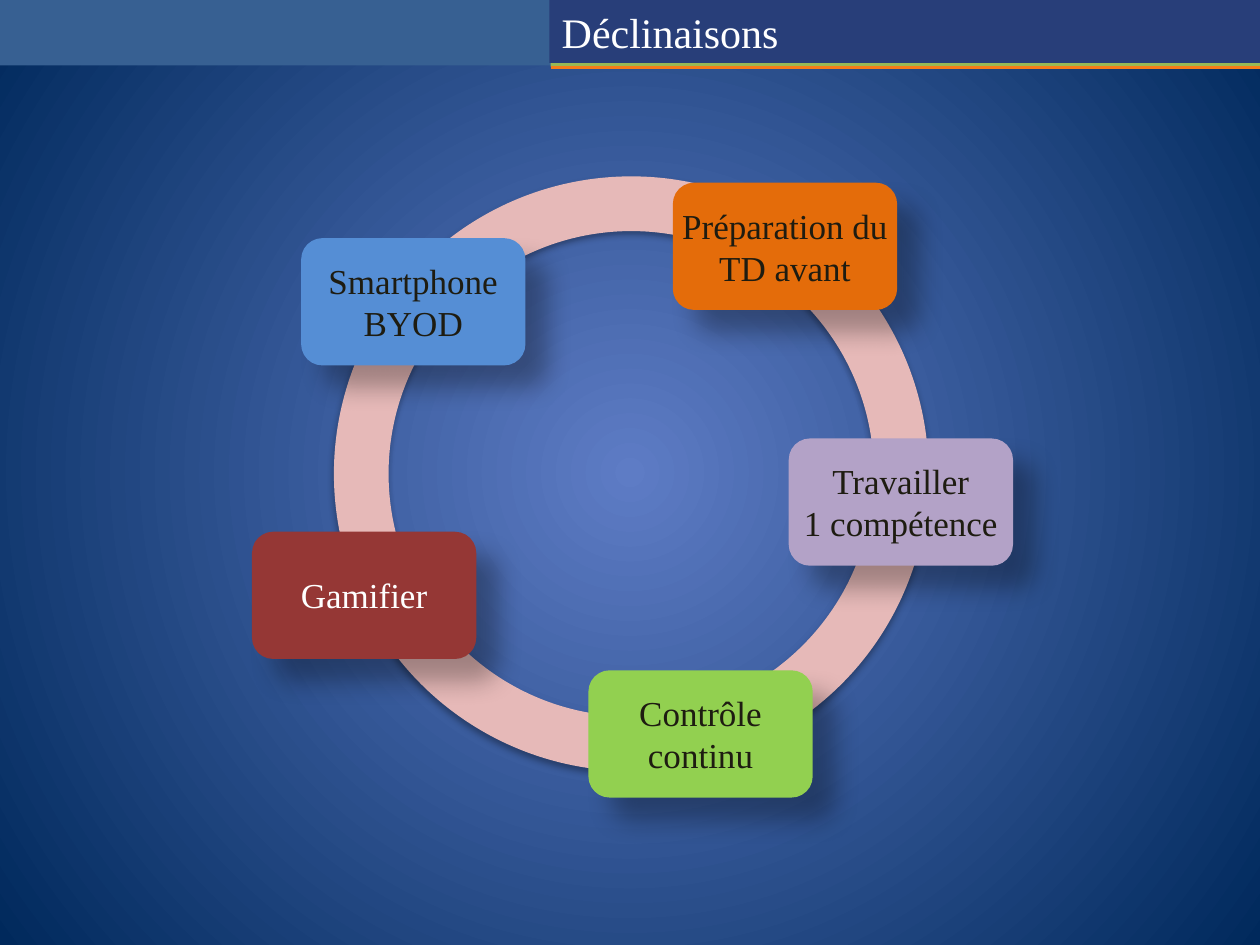
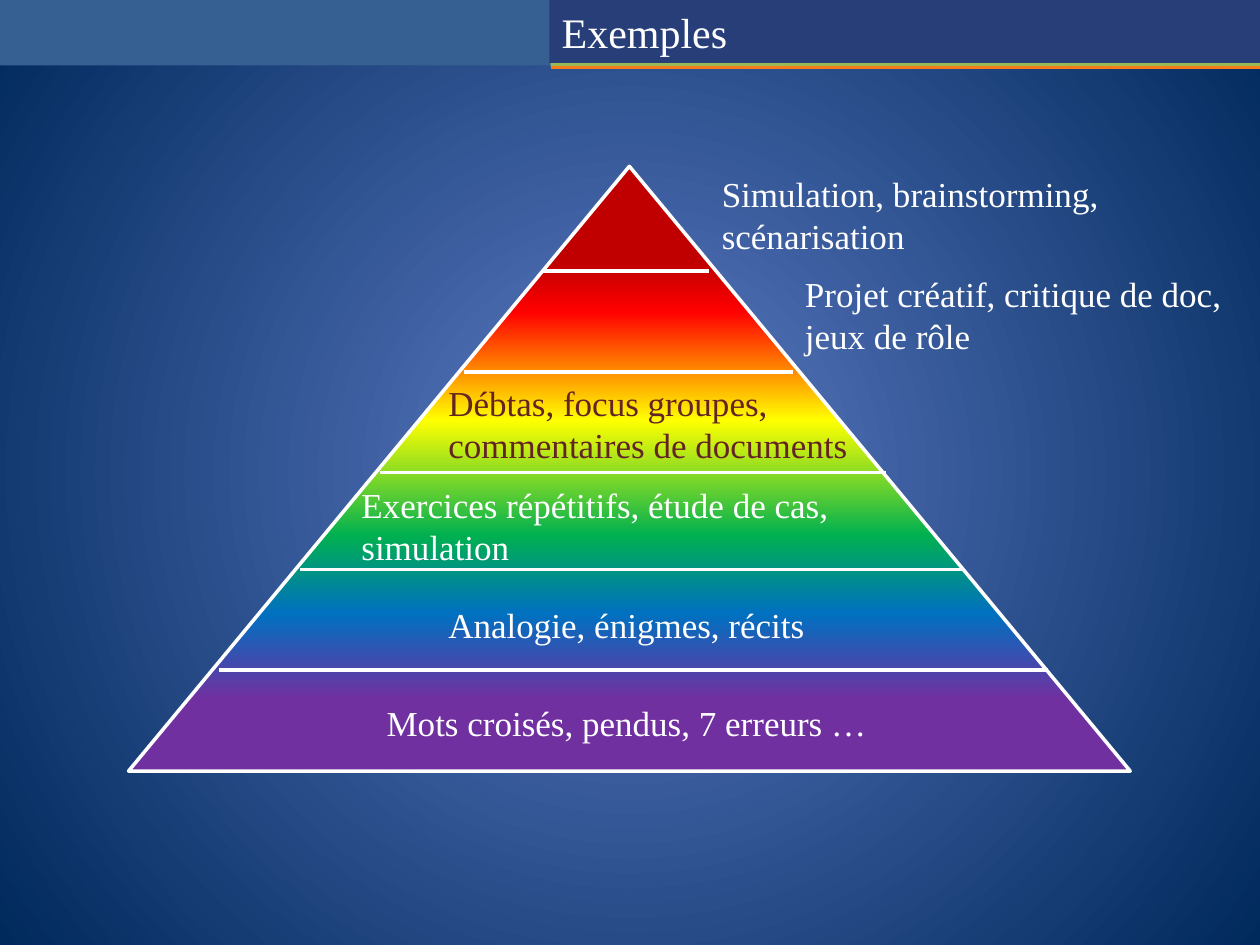
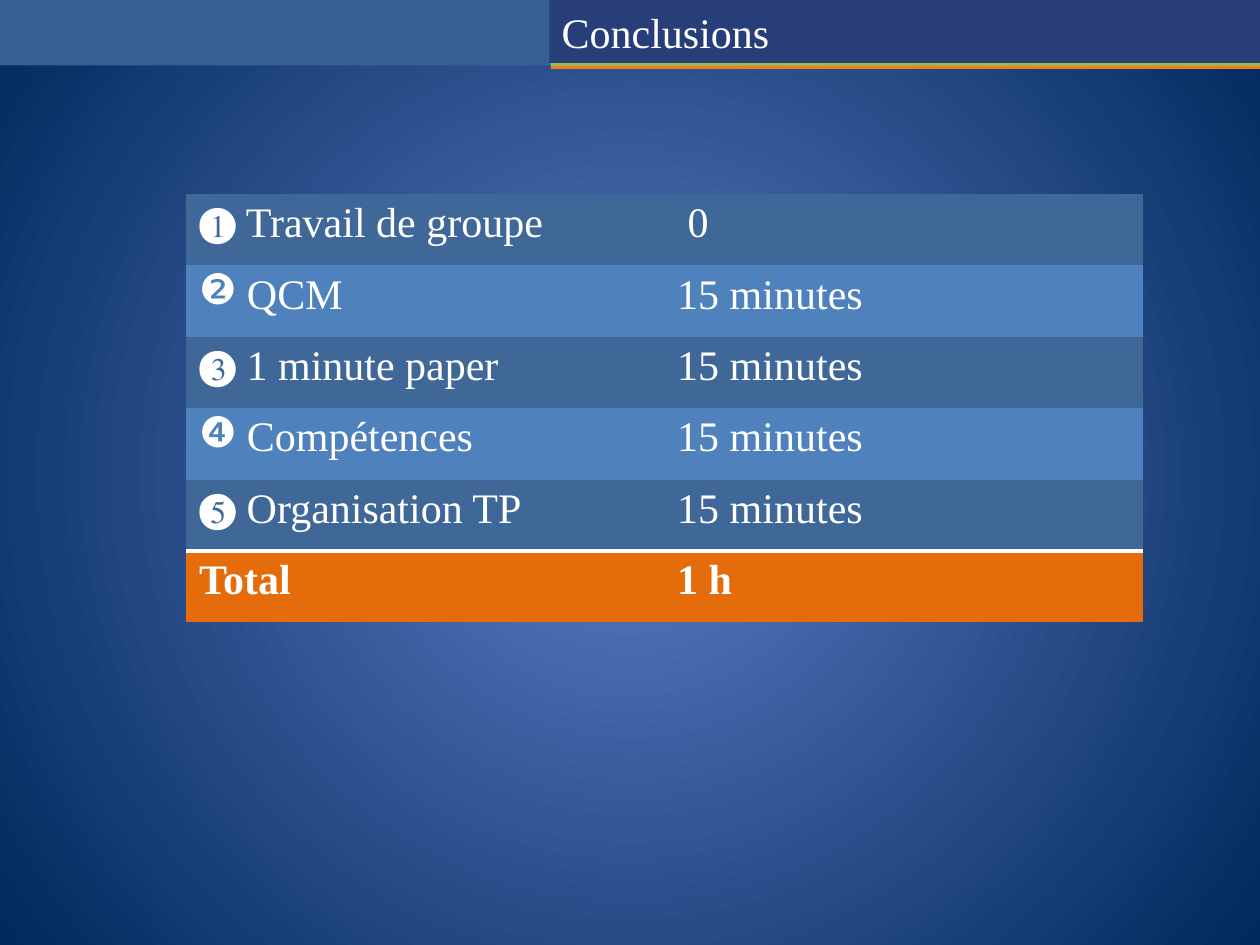
from dataclasses import dataclass

from lxml.etree import SubElement
from pptx import Presentation
from pptx.dml.color import RGBColor
from pptx.enum.shapes import MSO_CONNECTOR, MSO_SHAPE
from pptx.enum.text import MSO_ANCHOR, MSO_AUTO_SIZE, PP_ALIGN
from pptx.oxml import parse_xml
from pptx.oxml.ns import nsdecls, qn
from pptx.util import Inches, Pt

COLUMNS, ROWS = 100, 75
CELL = Inches(0.1)
BLANK_LAYOUT = 6
NO_GRID_STYLE = "{2D5ABB26-0587-4C30-8999-92F81FD0307C}"


@dataclass(frozen=True)
class Theme:
    font: str = "Times New Roman"
    title_size: int = 24
    label_size: int = 20
    light: str = "FFFFFF"
    dark: str = "1E1C11"
    maroon: str = "632523"
    glow: str = "5E7CC5"
    night: str = "00295C"
    band: str = "376092"
    title_band: str = "283E79"
    green_strip: str = "98B955"
    orange_line: str = "F57D19"
    ring: str = "E6B9B8"
    orange: str = "E46C0A"
    lilac: str = "B3A2C7"
    brick: str = "953735"
    sky: str = "558ED5"
    lime: str = "92D050"
    row_odd: str = "3F6797"
    row_even: str = "4F81BD"
    rainbow: tuple = ((12, "7030A0"), (26, "0070C0"), (39, "00B050"),
                      (58, "FFFF00"), (76, "FF0000"), (84, "C00000"))


THEME = Theme()


@dataclass(frozen=True)
class Box:
    """A region in grid columns and rows."""
    left: float
    top: float
    width: float
    height: float

    def within(self, left, top, width, height):
        return Box(self.left + left, self.top + top, width, height)

    def emu(self):
        return [round(length * CELL) for length in
                (self.left, self.top, self.width, self.height)]


SLIDE = Box(0, 0, COLUMNS, ROWS)

# Label, position in the ring's box, fill, text colour
CARDS = [
    (["Préparation du\nTD avant"], 26.9, 0.5, THEME.orange, THEME.dark),
    (["Travailler", "1 compétence"], 36.1, 20.8, THEME.lilac, THEME.dark),
    (["Gamifier"], -6.5, 28.2, THEME.brick, THEME.light),
    (["Smartphone\nBYOD"], -2.6, 4.9, THEME.sky, THEME.dark),
    (["Contrôle continu"], 20.2, 39.2, THEME.lime, THEME.dark),
]

# Separators in the pyramid's box: left, right, row
SEPARATORS = [(32.9, 46.1, 8.3), (26.6, 52.7, 16.3), (20, 60.1, 24.3),
              (13.6, 66.3, 32), (7.2, 73, 40)]

# Text, left, top and width in the pyramid's box, colour
TIERS = [
    ("Simulation, brainstorming,\nscénarisation", 46.1, 0, 32.1, THEME.light),
    ("Projet créatif, critique de doc,\njeux de rôle", 52.7, 7.9, 36, THEME.light),
    ("Débtas, focus groupes,\ncommentaires de documents", 24.4, 16.6, 33.9, THEME.maroon),
    ("Exercices répétitifs, étude de cas,\nsimulation", 17.5, 24.7, 39.3, THEME.light),
    ("Analogie, énigmes, récits", 24.4, 34.2, 30.5, THEME.light),
    ("Mots croisés, pendus, 7 erreurs …", 19.5, 42, 40.4, THEME.light),
]

# Bullet, activity, duration
SCHEDULE = [
    (None, "❶ Travail de groupe", " 0"),
    ("❷", "QCM", "15 minutes"),
    (None, "❸ 1 minute paper", "15 minutes"),
    ("❹", "Compétences", "15 minutes"),
    (None, "❺ Organisation TP", "15 minutes"),
    (None, "Total", "1 h"),
]


def rgb(color):
    return RGBColor.from_string(color)


def gradient(stops, direction):
    """Gradient fill element; direction is its a:lin or a:path markup."""
    marks = "".join(f'<a:gs pos="{percent * 1000}"><a:srgbClr val="{color}"/></a:gs>'
                    for percent, color in stops)
    return parse_xml(f'<a:gradFill {nsdecls("a")} rotWithShape="1">'
                     f'<a:gsLst>{marks}</a:gsLst>{direction}</a:gradFill>')


def replace_gradient(fill, parent, stops, direction):
    fill.gradient()
    parent.replace(parent.find(qn("a:gradFill")), gradient(stops, direction))


def add_shadow(shape, alpha, blur, distance, angle):
    effects = shape._element.spPr.find(qn("a:effectLst"))
    effects.append(parse_xml(
        f'<a:outerShdw {nsdecls("a")} blurRad="{Pt(blur)}" dist="{Pt(distance)}" '
        f'dir="{angle * 60000}" algn="ctr" rotWithShape="0"><a:srgbClr val="000000">'
        f'<a:alpha val="{alpha * 1000}"/></a:srgbClr></a:outerShdw>'))


def add_block(shapes, preset, box, color):
    block = shapes.add_shape(preset, *box.emu())
    block.shadow.inherit = False
    block.fill.solid()
    block.fill.fore_color.rgb = rgb(color)
    block.line.fill.background()
    return block


def add_rule(shapes, box, color, weight):
    """Horizontal line along the top of the box."""
    left, top, width, _ = box.emu()
    rule = shapes.add_connector(MSO_CONNECTOR.STRAIGHT, left, top, left + width, top)
    rule.line.color.rgb = rgb(color)
    rule.line.width = Pt(weight)
    SubElement(rule._element.spPr, qn("a:effectLst"))


def write(frame, paragraphs, color, size, align=PP_ALIGN.LEFT, bold=False):
    for index, text in enumerate(paragraphs):
        paragraph = frame.add_paragraph() if index else frame.paragraphs[0]
        paragraph.alignment = align
        for number, line in enumerate(text.split("\n")):
            if number:
                paragraph.add_line_break()
            run = paragraph.add_run()
            run.text = line
            run.font.name = THEME.font
            run.font.size = Pt(size)
            run.font.bold = bold
            run.font.color.rgb = rgb(color)


def add_label(shapes, box, paragraphs, color, align=PP_ALIGN.LEFT, wrap=True):
    frame = shapes.add_textbox(*box.emu()).text_frame
    frame.word_wrap = wrap
    frame.auto_size = MSO_AUTO_SIZE.SHAPE_TO_FIT_TEXT
    write(frame, paragraphs, color, THEME.label_size, align)


def label_height(line_count):
    return 1.1 + 3.3 * line_count


def add_titled_slide(deck, title):
    shapes = deck.slides.add_slide(deck.slide_layouts[BLANK_LAYOUT]).shapes
    add_block(shapes, MSO_SHAPE.RECTANGLE, SLIDE.within(0, 0, COLUMNS, 5.2), THEME.band)
    add_block(shapes, MSO_SHAPE.RECTANGLE, SLIDE.within(43.7, 4.7, 56.3, 0.6),
              THEME.green_strip)
    add_rule(shapes, SLIDE.within(43.7, 5.35, 56.3, 0), THEME.orange_line, 1.5)
    banner = add_block(shapes, MSO_SHAPE.RECTANGLE,
                       SLIDE.within(43.6, 0, 56.4, 5), THEME.title_band)
    banner.text_frame.vertical_anchor = MSO_ANCHOR.MIDDLE
    write(banner.text_frame, [title], THEME.light, THEME.title_size)
    return shapes


def draw_ring(shapes, box):
    ring = add_block(shapes, MSO_SHAPE.DONUT, box, THEME.ring)
    ring.adjustments[0] = 0.092
    add_shadow(ring, 32, 3.5, 2.2, 90)
    for paragraphs, left, top, fill, color in CARDS:
        draw_card(shapes, box.within(left, top, 17.8, 10.1), paragraphs, fill, color)


def draw_card(shapes, box, paragraphs, fill, color):
    parts = shapes.add_group_shape().shapes
    card = add_block(parts, MSO_SHAPE.ROUNDED_RECTANGLE, box, fill)
    add_shadow(card, 30, 15, 18, 45)
    line_count = 1 if paragraphs == ["Gamifier"] else 2
    height = label_height(line_count)
    add_label(parts, box.within(-0.3, (box.height - height) / 2, box.width + 0.6, height),
              paragraphs, color, PP_ALIGN.CENTER)


def draw_pyramid(shapes, box):
    pyramid = add_block(shapes, MSO_SHAPE.ISOSCELES_TRIANGLE, box, THEME.light)
    replace_gradient(pyramid.fill, pyramid._element.spPr, THEME.rainbow,
                     '<a:lin ang="16200000" scaled="0"/>')
    pyramid.line.color.rgb = rgb(THEME.light)
    pyramid.line.width = Pt(2)
    for left, right, row in SEPARATORS:
        add_rule(shapes, box.within(left, row, right - left, 0), THEME.light, 2.25)
    for text, left, top, width, color in TIERS:
        height = label_height(text.count("\n") + 1)
        add_label(shapes, box.within(left, top, width, height), [text], color, wrap=False)


def draw_schedule(shapes, box):
    table = shapes.add_table(len(SCHEDULE), 2, *box.emu()).table
    table._tbl.tblPr.find(qn("a:tableStyleId")).text = NO_GRID_STYLE
    table.first_row = table.horz_banding = False
    for row, (bullet, *texts) in enumerate(SCHEDULE):
        is_total = row == len(SCHEDULE) - 1
        color = THEME.orange if is_total else (THEME.row_odd, THEME.row_even)[row % 2]
        for column, text in enumerate(texts):
            cell = table.cell(row, column)
            cell.fill.solid()
            cell.fill.fore_color.rgb = rgb(color)
            write(cell.text_frame, [text], THEME.light, THEME.title_size, bold=is_total)
            if is_total:
                add_top_border(cell)
        if bullet:
            add_bullet(table.cell(row, 0).text_frame.paragraphs[0], bullet)


def add_top_border(cell):
    cell._tc.get_or_add_tcPr().insert(0, parse_xml(
        f'<a:lnT {nsdecls("a")} w="{Pt(2)}"><a:solidFill>'
        f'<a:srgbClr val="{THEME.light}"/></a:solidFill></a:lnT>'))


def add_bullet(paragraph, symbol):
    properties = paragraph._p.get_or_add_pPr()
    indent = Inches(0.38)
    properties.set("marL", str(indent))
    properties.set("indent", str(-indent))
    SubElement(properties, qn("a:buChar")).set("char", symbol)


def set_background(master):
    fill = master.background.fill
    fill.gradient()
    replace_gradient(fill, master._element.cSld.bg.bgPr,
                     ((0, THEME.glow), (100, THEME.night)),
                     '<a:path path="circle"><a:fillToRect l="50000" t="50000" '
                     'r="50000" b="50000"/></a:path>')


def main():
    deck = Presentation()
    deck.slide_width, deck.slide_height = COLUMNS * CELL, ROWS * CELL
    set_background(deck.slide_master)
    draw_ring(add_titled_slide(deck, "Déclinaisons"), SLIDE.within(26.5, 14, 47.2, 47.2))
    draw_pyramid(add_titled_slide(deck, "Exemples"), SLIDE.within(10.2, 13.2, 79.5, 48))
    draw_schedule(add_titled_slide(deck, "Conclusions"), SLIDE.within(14.8, 15.4, 75.9, 34))
    deck.save("out.pptx")


if __name__ == "__main__":
    main()
